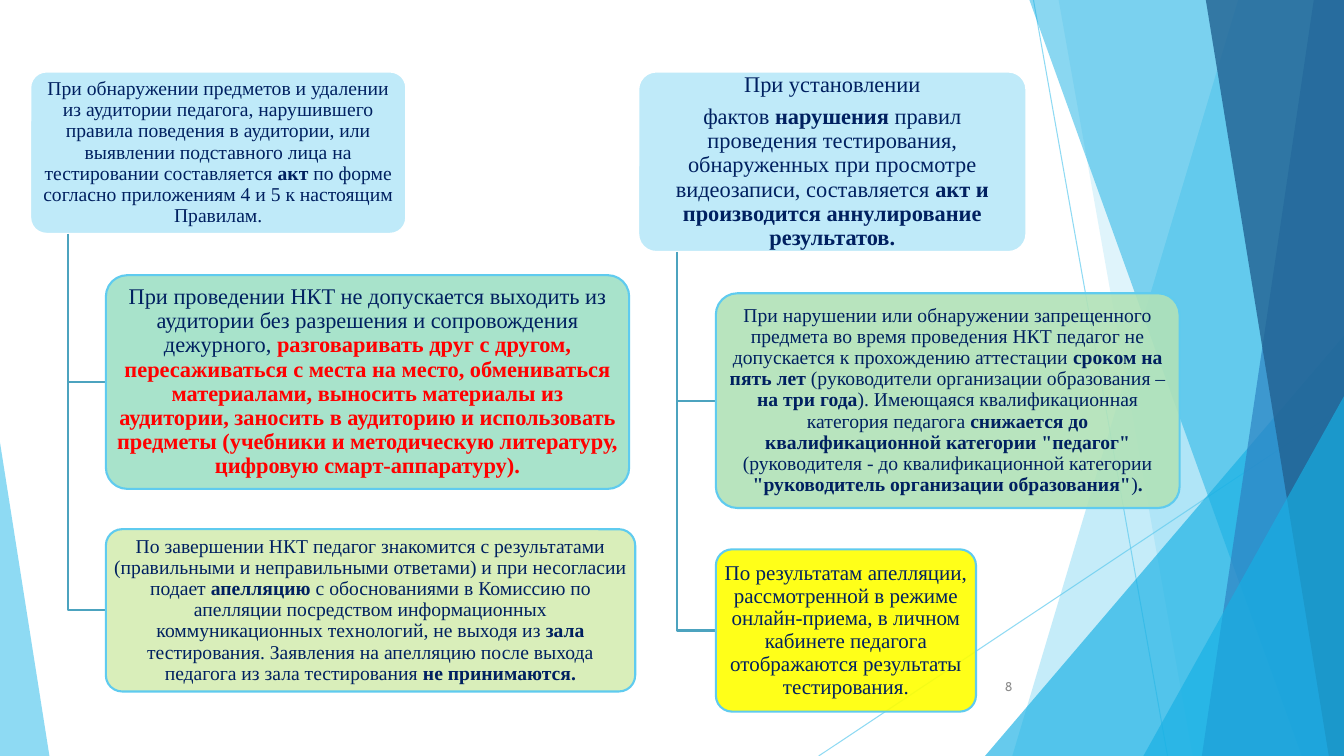
from pptx import Presentation
from pptx.dml.color import RGBColor
from pptx.enum.shapes import MSO_CONNECTOR, MSO_SHAPE
from pptx.enum.text import MSO_ANCHOR, PP_ALIGN
from pptx.oxml.ns import qn
from pptx.util import Inches, Pt
from lxml import etree

STRAIGHT = MSO_CONNECTOR.STRAIGHT
TRIANGLE, ROUNDED = MSO_SHAPE.ISOSCELES_TRIANGLE, MSO_SHAPE.ROUNDED_RECTANGLE
MIDDLE, CENTER, RIGHT = MSO_ANCHOR.MIDDLE, PP_ALIGN.CENTER, PP_ALIGN.RIGHT

NAVY = RGBColor(0x00, 0x20, 0x60)
RED = RGBColor(0xFF, 0x00, 0x00)
GRAY = RGBColor(0x8C, 0x8C, 0x8C)
WHITE = RGBColor(0xFF, 0xFF, 0xFF)
SKY = RGBColor(0x5F, 0xCB, 0xEF)
AZURE = RGBColor(0x17, 0xB0, 0xE4)
BLUE = RGBColor(0x2E, 0x83, 0xC3)
DEEP_BLUE = RGBColor(0x22, 0x62, 0x92)
TEAL = RGBColor(0x4C, 0xA3, 0xBF)
PALE_BLUE = RGBColor(0xBF, 0xEA, 0xF9)
MINT = RGBColor(0x9F, 0xE1, 0xC6)
LIME = RGBColor(0xD5, 0xED, 0xB3)
GREEN = RGBColor(0xB1, 0xE2, 0xB8)
YELLOW = RGBColor(0xFF, 0xFF, 0x00)

WIDTH, HEIGHT = 13.33, 7.5

# Background: thin lines, then bands (top left x, bottom left x) reaching the
# right edge and triangles (left, top, width, apex), with opacity in percent
RAYS = [(10.25, 0, 11.58, HEIGHT), (WIDTH, 4.03, 8.12, HEIGHT)]
FACETS = [
    ("band", (12.28, 10.04), SKY, 36),
    ("band", (10.5, 11.83), SKY, 20),
    ("triangle", (9.77, 3.33, 3.56, 1), AZURE, 66),
    ("band", (10.21, 12.91), AZURE, 50),
    ("band", (13.03, 11.92), BLUE, 70),
    ("band", (11.96, 13.18), DEEP_BLUE, 80),
    ("triangle", (11.34, 3.93, 1.99, 1), AZURE, 66),
    ("triangle", (0, 4.39, 0.49, 0), SKY, 70),
]

# Each column: a heading box and its child boxes; *marked* words are emphasised
COLUMNS = [
    [
        dict(box=(0.3, 0.71, 3.73, 1.61), fill=PALE_BLUE, size=14, paragraphs=[
            "При обнаружении предметов и удалении из аудитории педагога, нарушившего "
            "правила поведения в аудитории, или выявлении подставного лица на "
            "тестировании составляется *акт *по форме согласно приложениям 4 и 5 "
            "к настоящим Правилам."]),
        dict(box=(1.05, 2.73, 5.19, 2.12), fill=MINT, size=16, emphasis=RED, paragraphs=[
            "При проведении НКТ не допускается выходить из аудитории без разрешения "
            "и сопровождения дежурного, *разговаривать друг с другом, пересаживаться "
            "с места на место, обмениваться материалами, выносить материалы из "
            "аудитории, заносить в аудиторию и использовать предметы (учебники и "
            "методическую литературу, цифровую смарт-аппаратуру).*"]),
        dict(box=(1.05, 5.25, 5.25, 1.61), fill=LIME, size=14, paragraphs=[
            "По завершении НКТ педагог знакомится с результатами (правильными и "
            "неправильными ответами) и при несогласии подает *апелляцию *с "
            "обоснованиями в Комиссию по апелляции посредством информационных "
            "коммуникационных технологий, не выходя из *зала *тестирования. Заявления "
            "на апелляцию после выхода педагога из зала тестирования *не принимаются.*"]),
    ],
    [
        dict(box=(6.33, 0.71, 3.85, 1.79), fill=PALE_BLUE, size=16, paragraphs=[
            "При установлении",
            "фактов *нарушения* правил проведения тестирования, обнаруженных при "
            "просмотре видеозаписи, составляется *акт и производится аннулирование "
            "результатов.*"]),
        dict(box=(7.1, 2.91, 4.6, 2.13), fill=GREEN, size=14, paragraphs=[
            "При нарушении или обнаружении запрещенного предмета во время проведения "
            "НКТ педагог не допускается к прохождению аттестации *сроком на пять лет "
            "*(руководители организации образования – *на три года*). Имеющаяся "
            "квалификационная категория педагога *снижается до квалификационной "
            "категории \"педагог\"* (руководителя - до квалификационной категории "
            "*\"руководитель организации образования\"*)*.*"]),
        dict(box=(7.1, 5.45, 2.58, 1.61), fill=YELLOW, size=15, paragraphs=[
            "По результатам апелляции, рассмотренной в режиме онлайн-приема, в личном "
            "кабинете педагога отображаются результаты тестирования."]),
    ],
]

presentation = Presentation()
presentation.slide_width, presentation.slide_height = Inches(WIDTH), Inches(HEIGHT)
slide = presentation.slides.add_slide(presentation.slide_layouts[6])
shapes = slide.shapes


def set_opacity(shape, tag, percent):
    """Make the fill (a:solidFill) or the line (a:ln) partly transparent."""
    part = shape._element.spPr.find(qn(tag))
    color = next(part.iter(qn("a:srgbClr")))
    etree.SubElement(color, qn("a:alpha")).set("val", str(percent * 1000))


def paint(shape, fill=None, opacity=100, line=None, width=1.5):
    shape.shadow.inherit = False
    if fill is None:
        shape.fill.background()
    else:
        shape.fill.solid()
        shape.fill.fore_color.rgb = fill
        if opacity < 100:
            set_opacity(shape, "a:solidFill", opacity)
    if line is None:
        shape.line.fill.background()
    else:
        shape.line.color.rgb = line
        shape.line.width = Pt(width)


def add_path(points, close):
    points = [(Inches(x), Inches(y)) for x, y in points]
    builder = shapes.build_freeform(*points[0], scale=1.0)
    builder.add_line_segments(points[1:], close=close)
    return builder.convert_to_shape()


def write(shape, paragraphs, size, font="Times New Roman", color=NAVY, emphasis=NAVY,
          align=CENTER, insets=(0.03, 0.02), spacing=0.9, after=0.35):
    frame = shape.text_frame
    frame.word_wrap = True
    frame.vertical_anchor = MIDDLE
    frame.margin_left = frame.margin_right = Inches(insets[0])
    frame.margin_top = frame.margin_bottom = Inches(insets[1])
    for index, text in enumerate(paragraphs):
        paragraph = frame.add_paragraph() if index else frame.paragraphs[0]
        paragraph.alignment = align
        paragraph.line_spacing = spacing
        paragraph.space_after = Pt(size * after)
        for position, piece in enumerate(text.split("*")):
            if not piece:
                continue
            marked = position % 2 == 1
            run = paragraph.add_run()
            run.text = piece
            run.font.name, run.font.size, run.font.bold = font, Pt(size), marked
            run.font.color.rgb = emphasis if marked else color


# Background rays and facets
for x1, y1, x2, y2 in RAYS:
    ray = shapes.add_connector(STRAIGHT, Inches(x1), Inches(y1), Inches(x2), Inches(y2))
    ray.line.color.rgb = SKY
    ray.line.width = Pt(0.75)
    set_opacity(ray, "a:ln", 70)
    etree.SubElement(ray._element.spPr, qn("a:effectLst"))

for kind, geometry, color, opacity in FACETS:
    if kind == "band":
        top_x, bottom_x = geometry
        facet = add_path([(top_x, 0), (WIDTH, 0), (WIDTH, HEIGHT), (bottom_x, HEIGHT)], True)
    else:
        left, top, width, apex = geometry
        facet = shapes.add_shape(TRIANGLE, Inches(left), Inches(top),
                                 Inches(width), Inches(HEIGHT - top))
        facet.adjustments[0] = apex
    paint(facet, fill=color, opacity=opacity)

# Slide number
number = shapes.add_textbox(Inches(9.39), Inches(6.61), Inches(0.75), Inches(0.4))
write(number, ["8"], 9, font="Cabin", color=GRAY, align=RIGHT,
      insets=(0.1, 0.05), spacing=1, after=0)

# Hierarchy: every child hangs on an elbow a tenth of the way along its heading
for column in COLUMNS:
    left, top, width, height = column[0]["box"]
    trunk_x, trunk_y = left + width / 10, top + height
    for level, item in enumerate(column):
        x, y, w, h = item["box"]
        if level:
            middle = y + h / 2
            elbow = add_path([(trunk_x, trunk_y), (trunk_x, middle), (x, middle)], False)
            paint(elbow, line=TEAL)
        card = shapes.add_shape(ROUNDED, Inches(x), Inches(y), Inches(w), Inches(h))
        card.adjustments[0] = 0.1
        paint(card, fill=item["fill"], opacity=90 if level else 100,
              line=SKY if level else WHITE)
        write(card, item["paragraphs"], item["size"], emphasis=item.get("emphasis", NAVY))

presentation.save("out.pptx")
